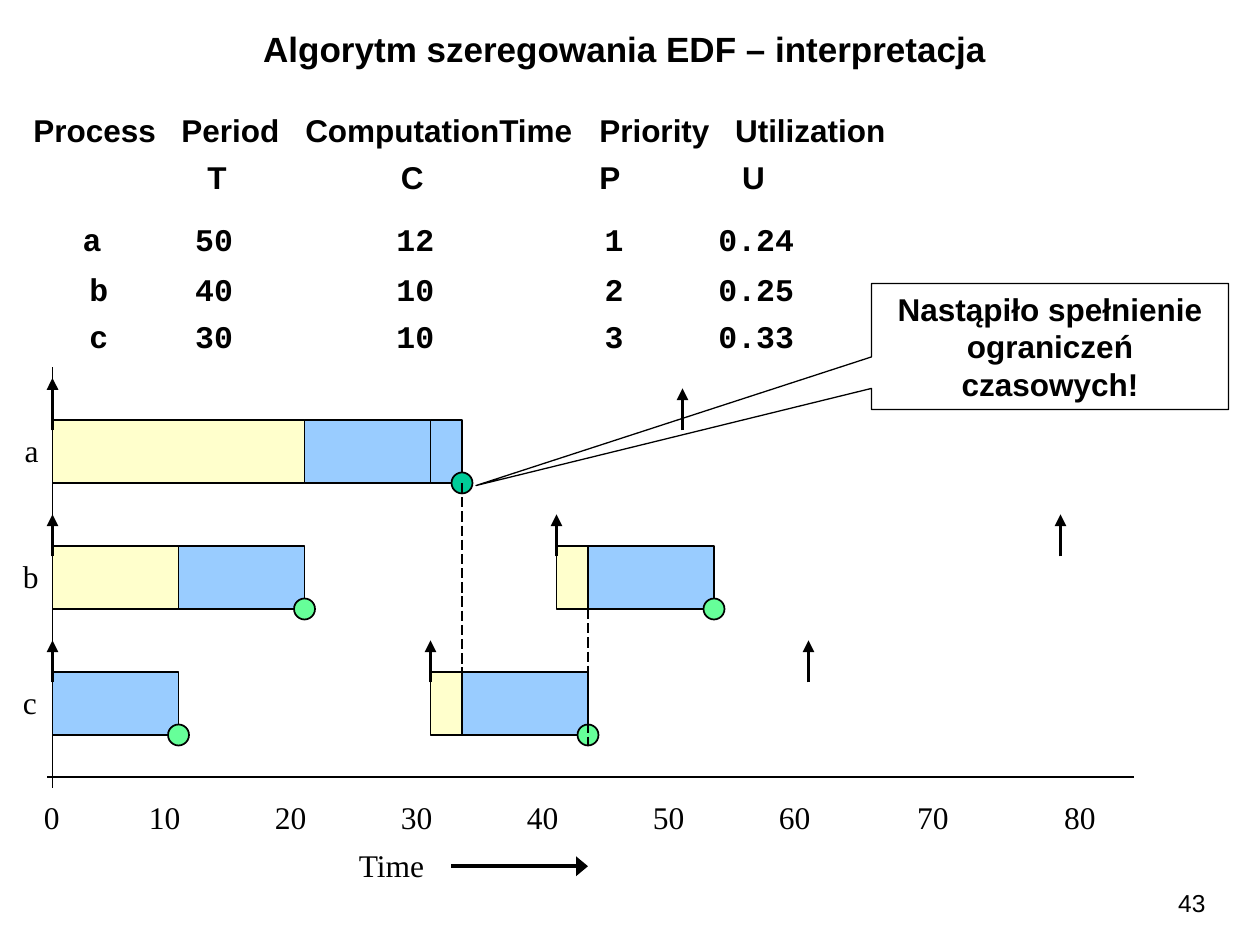
from lxml import etree
from pptx import Presentation
from pptx.dml.color import RGBColor
from pptx.enum import dml, shapes, text
from pptx.oxml import ns
from pptx.util import Pt

BLACK = RGBColor(0x00, 0x00, 0x00)
WAITING = RGBColor(0xFF, 0xFF, 0xCC)
RUNNING = RGBColor(0x99, 0xCC, 0xFF)
DONE = RGBColor(0x66, 0xFF, 0x99)
DONE_LAST = RGBColor(0x00, 0xCC, 0x99)
SANS, SERIF, MONO = "Arial", "Times New Roman", "Courier New"
LEFT, CENTER, RIGHT = text.PP_ALIGN.LEFT, text.PP_ALIGN.CENTER, text.PP_ALIGN.RIGHT

ORIGIN = 30
UNIT = 7.2
BAR_HEIGHT = 36
MARKER = 12

HEADER_TABS = (84.6, 155.4, 323.4, 401)
SYMBOL_TABS = (99.4, 210, 323.4, 405)
A_TABS = (28.2, 92.5, 207.5, 326.5, 391.5)
BC_TABS = (32,) + A_TABS[1:]

PROCESS_ROWS = [
    ("Process\tPeriod\tComputationTime\tPriority\tUtilization", SANS, 0, HEADER_TABS),
    ("\tT\tC\tP\tU", SANS, 5, SYMBOL_TABS),
    ("\ta\t50\t12\t1\t0.24", MONO, 14.2, A_TABS),
    ("\tb\t40\t10\t2\t0.25", MONO, 6.5, BC_TABS),
    ("\tc\t30\t10\t3\t0.33", MONO, 5.4, BC_TABS),
]

TIMELINES = [
    ("a", 7, 240, [(0, 20, WAITING), (20, 30, RUNNING), (30, 32.5, RUNNING)],
     [(0, 24), (50, 18)], [(32.5, DONE_LAST)]),
    ("b", 6, 312, [(0, 10, WAITING), (10, 20, RUNNING), (40, 42.5, WAITING),
                   (42.5, 52.5, RUNNING)],
     [(0, 18), (40, 18), (80, 18)], [(20, DONE), (52.5, DONE)]),
    ("c", 6, 384, [(0, 10, RUNNING), (30, 32.5, WAITING), (32.5, 42.5, RUNNING)],
     [(0, 18), (30, 18), (60, 18)], [(10, DONE), (42.5, DONE)]),
]


def at_time(moment):
    return ORIGIN + UNIT * moment


class Painter:
    def __init__(self, page):
        self.page = page

    def style(self, para, size=18, font=SANS, bold=False, align=LEFT):
        para.alignment = align
        for span in para.runs:
            span.font.size = Pt(size)
            span.font.name = font
            span.font.bold = bold
            span.font.color.rgb = BLACK

    def title(self, words, left, top, width, height):
        box = self.page.shapes.title
        box.left, box.top = Pt(left), Pt(top)
        box.width, box.height = Pt(width), Pt(height)
        box.text_frame.text = words
        self.style(box.text_frame.paragraphs[0], 20, bold=True, align=CENTER)

    def process_rows(self, rows, left, top, width, height):
        box = self.page.shapes.add_textbox(Pt(left), Pt(top), Pt(width), Pt(height))
        frame = box.text_frame
        frame.word_wrap = True
        frame.text = "\n".join(row[0] for row in rows)
        for para, (_, font, gap, stops) in zip(frame.paragraphs, rows):
            self.style(para, font=font, bold=True)
            para.space_before = Pt(gap)
            tabs = etree.SubElement(para._p.get_or_add_pPr(), ns.qn("a:tabLst"))
            for stop in stops:
                etree.SubElement(tabs, ns.qn("a:tab"), pos=str(int(Pt(stop))), algn="l")

    def label(self, words, left, top, width, height=28.8, size=18, font=SERIF, align=LEFT):
        box = self.page.shapes.add_textbox(Pt(left), Pt(top), Pt(width), Pt(height))
        box.text_frame.word_wrap = False
        box.text_frame.text = words
        self.style(box.text_frame.paragraphs[0], size, font, align=align)

    def shape(self, kind, left, top, width, height, fill=None, weight=1):
        item = self.page.shapes.add_shape(kind, Pt(left), Pt(top), Pt(width), Pt(height))
        item.shadow.inherit = False
        if fill is None:
            item.fill.background()
        else:
            item.fill.solid()
            item.fill.fore_color.rgb = fill
        item.line.color.rgb = BLACK
        item.line.width = Pt(weight)
        return item

    def bar(self, start, end, top, fill):
        self.shape(shapes.MSO_SHAPE.RECTANGLE, at_time(start), top,
                   UNIT * (end - start), BAR_HEIGHT, fill)

    def marker(self, moment, middle, fill):
        self.shape(shapes.MSO_SHAPE.OVAL, at_time(moment) - MARKER / 2,
                   middle - MARKER / 2, MARKER, MARKER, fill)

    def callout(self, words, *area):
        item = self.shape(shapes.MSO_SHAPE.RECTANGULAR_CALLOUT, *area, weight=0.75)
        item.adjustments[0] = -1.608
        item.adjustments[1] = 1.104
        frame = item.text_frame
        frame.word_wrap = True
        frame.vertical_anchor = text.MSO_ANCHOR.TOP
        frame.text = words
        self.style(frame.paragraphs[0], bold=True, align=CENTER)

    def line(self, x1, y1, x2, y2, weight=0.75, dashed=False):
        link = self.page.shapes.add_connector(
            shapes.MSO_CONNECTOR.STRAIGHT, Pt(x1), Pt(y1), Pt(x2), Pt(y2))
        link.line.color.rgb = BLACK
        link.line.width = Pt(weight)
        if dashed:
            link.line.dash_style = dml.MSO_LINE.LONG_DASH
        etree.SubElement(link._element.spPr, ns.qn("a:effectLst"))
        return link

    def arrow(self, x1, y1, x2, y2, head="med"):
        link = self.line(x1, y1, x2, y2, 2.25)
        etree.SubElement(link.line._get_or_add_ln(), ns.qn("a:tailEnd"),
                         type="triangle", w=head)


def main():
    deck = Presentation()
    deck.slide_width, deck.slide_height = Pt(720), Pt(540)
    painter = Painter(deck.slides.add_slide(deck.slide_layouts[5]))

    painter.title("Algorytm szeregowania EDF – interpretacja", 18, 12, 678, 31)
    painter.process_rows(PROCESS_ROWS, 12, 60, 510, 150)
    painter.label("43", 630, 504, 66, 24, 14, SANS, RIGHT)

    for name, left, top, bars, releases, finishes in TIMELINES:
        painter.label(name, left, top + 3, 23)
        for start, end, fill in bars:
            painter.bar(start, end, top, fill)
        for moment, rise in releases:
            painter.arrow(at_time(moment), top + 6, at_time(moment), top - rise)
        for moment, fill in finishes:
            painter.marker(moment, top + BAR_HEIGHT, fill)

    painter.line(27, 444, 648, 444, 1)
    painter.line(ORIGIN, 450, ORIGIN, 210)
    painter.line(at_time(32.5), 276, at_time(32.5), 384, dashed=True)
    painter.line(at_time(42.5), 348, at_time(42.5), 426, dashed=True)

    tick_lefts = [18] + [78 + 72 * step for step in range(6)] + [517, 601]
    for step, left in enumerate(tick_lefts):
        painter.label(str(10 * step), left, 452.5, 32.4 if step else 23.4)
    painter.label("Time", 198, 480, 52.6)
    painter.arrow(258, 495, 336, 495, head="lg")

    painter.callout("Nastąpiło spełnienie ograniczeń czasowych!", 498, 162, 204, 72)
    deck.save("out.pptx")


if __name__ == "__main__":
    main()
